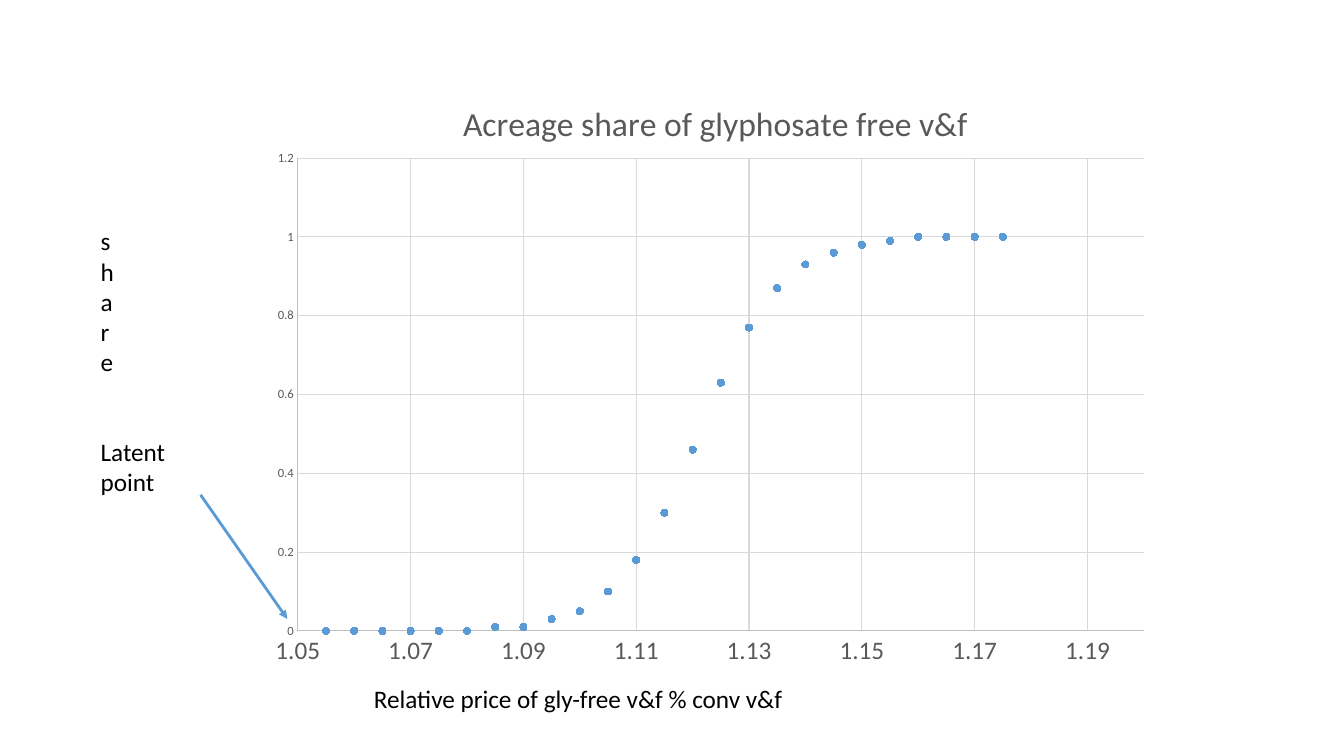
from lxml.etree import SubElement as Sub
from pptx import Presentation
from pptx.chart.data import XyChartData as XyData
from pptx.dml.color import RGBColor as Rgb
from pptx.enum.chart import XL_CHART_TYPE as Kind, XL_MARKER_STYLE as Mark
from pptx.enum.chart import XL_TICK_MARK as Tick
from pptx.enum.shapes import MSO_CONNECTOR as Conn
from pptx.oxml import parse_xml
from pptx.oxml.ns import nsdecls, qn
from pptx.util import Pt

FONT = "Calibri"
HUES = {"text": "000000", "soft": "595959", "axis": "BFBFBF",
        "grid": "D9D9D9", "blue": "5B9BD5"}
SHARES = [0, 0, 0, 0, 0, 0, 0.01, 0.01, 0.03, 0.05, 0.1, 0.18, 0.3, 0.46,
          0.63, 0.77, 0.87, 0.93, 0.96, 0.98, 0.99, 1, 1, 1, 1]


def hue(name):
    return Rgb.from_string(HUES[name])


def set_font(font, size, name):
    font.name, font.size, font.bold = FONT, Pt(size), False
    font.color.rgb = hue(name)


def set_line(line, name, width):
    line.color.rgb = hue(name)
    line.width = Pt(width)


def add_label(slide, text, left, top, width, height):
    box = slide.shapes.add_textbox(Pt(left), Pt(top), Pt(width), Pt(height))
    box.text_frame.word_wrap = True
    para = box.text_frame.paragraphs[0]
    para.text = text
    set_font(para.font, 18, "text")


def add_arrow(slide, x1, y1, x2, y2):
    line = slide.shapes.add_connector(Conn.STRAIGHT, Pt(x1), Pt(y1), Pt(x2), Pt(y2))
    set_line(line.line, "blue", 2)
    props = line.line._get_or_add_ln()
    Sub(props, qn("a:tailEnd"), type="triangle")
    Sub(line._element.spPr, qn("a:effectLst"))


def layout(inner="", **parts):
    """Return a manual chart layout in fractions of the chart's size."""
    target = f'<c:layoutTarget val="{inner}"/>' if inner else ""
    modes = "".join(f'<c:{k}Mode val="edge"/>' for k in parts if k in "xy")
    sizes = "".join(f'<c:{k} val="{v}"/>' for k, v in parts.items())
    return parse_xml(f'<c:layout {nsdecls("c")}><c:manualLayout>{target}{modes}'
                     f'{sizes}</c:manualLayout></c:layout>')


def place(node, new):
    """Give a chart part its layout."""
    old = node.find(qn("c:layout"))
    if old is not None:
        node.remove(old)
    text = node.find(qn("c:tx"))
    node.insert(0 if text is None else 1, new)


def style_axis(axis, size, low, high, step):
    axis.minimum_scale, axis.maximum_scale, axis.major_unit = low, high, step
    axis.major_tick_mark = axis.minor_tick_mark = Tick.NONE
    axis.has_major_gridlines = True
    set_line(axis.major_gridlines.format.line, "grid", 0.75)
    set_line(axis.format.line, "axis", 0.75)
    set_font(axis.tick_labels.font, size, "soft")
    axis.tick_labels.number_format = "General"
    axis.tick_labels.number_format_is_linked = False


def add_curve(slide):
    data = XyData()
    points = data.add_series("Series 1")
    for i, share in enumerate(SHARES):
        points.add_data_point((211 + i) / 200, share)
    chart = slide.shapes.add_chart(Kind.XY_SCATTER, Pt(184.3), Pt(50.4),
                                   Pt(645.8), Pt(434.2), data).chart
    set_font(chart.font, 10, "text")
    chart.has_legend = False
    chart.has_title = True
    title = chart.chart_title.text_frame.paragraphs[0]
    title.text = "Acreage share of glyphosate free v&f"
    set_font(title.font, 24, "soft")
    place(chart.chart_title._element, layout(x=0.22, y=0.04))
    plot = chart.plots[0]
    plot.vary_by_categories = False
    place(plot._element.getparent(),
          layout("inner", x=0.044, y=0.144, w=0.936, h=0.778))
    style_axis(chart.category_axis, 18, 1.05, 1.2, 0.02)
    style_axis(chart.value_axis, 9, 0, 1.2, 0.2)
    curve = plot.series[0]
    curve.smooth = False
    curve.format.line.fill.background()
    dot = curve.marker
    dot.style, dot.size = Mark.CIRCLE, 5
    dot.format.fill.solid()
    dot.format.fill.fore_color.rgb = hue("blue")
    set_line(dot.format.line, "blue", 0.75)


def main():
    deck = Presentation()
    deck.slide_width, deck.slide_height = Pt(960), Pt(540)
    slide = deck.slides.add_slide(deck.slide_layouts[6])
    add_curve(slide)
    add_label(slide, "Relative price of gly-free v&f % conv v&f", 260, 484.5, 540.7, 29)
    add_label(slide, "share", 64.8, 157.7, 18.7, 116.6)
    add_arrow(slide, 143.3, 353.5, 205.2, 442.1)
    add_label(slide, "Latent point", 64.8, 308.2, 77, 51)
    deck.save("out.pptx")


if __name__ == "__main__":
    main()
